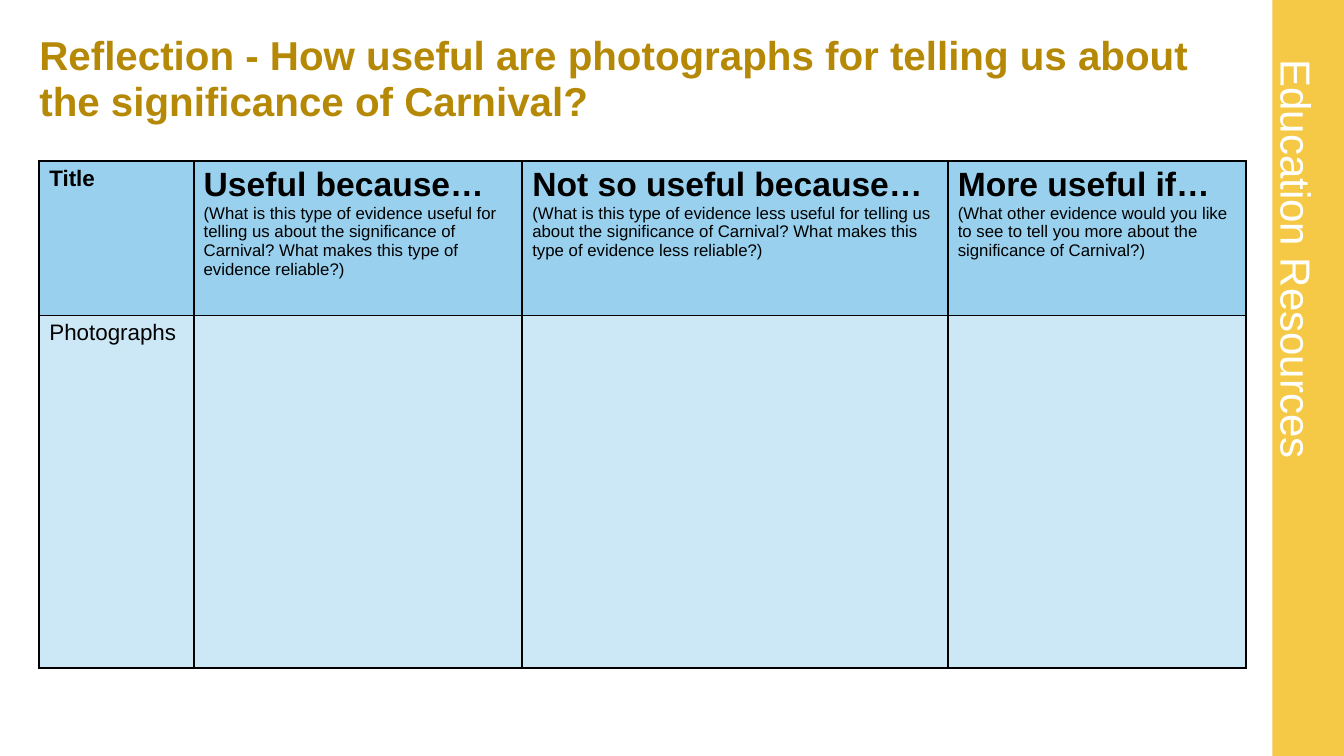
from dataclasses import dataclass

from lxml.etree import SubElement
from pptx import Presentation
from pptx.dml.color import RGBColor
from pptx.enum.shapes import MSO_SHAPE
from pptx.enum.text import MSO_ANCHOR, MSO_AUTO_SIZE, PP_ALIGN
from pptx.oxml.ns import qn
from pptx.util import Inches, Pt


@dataclass(frozen=True)
class Theme:
    font: str = "Arial"
    gold: str = "F5C946"
    title_gold: str = "B58906"
    header_blue: str = "98D0ED"
    body_blue: str = "CCE8F6"
    ink: str = "000000"
    white: str = "FFFFFF"
    title_size: float = 28.8
    banner_size: float = 30
    heading_size: float = 24
    label_size: float = 16
    prompt_size: float = 12
    border_width: float = 1.5


def apply(target, formats):
    for name, value in formats.items():
        setattr(target, name, value)


class SlideBuilder:
    def __init__(self, slide, theme):
        self.slide = slide
        self.theme = theme

    def add_text(self, paragraph, text, size, color, bold=False, **formats):
        run = paragraph.add_run()
        run.text = text
        apply(run.font, {"name": self.theme.font, "size": Pt(size), "bold": bold})
        run.font.color.rgb = RGBColor.from_string(color)
        apply(paragraph, formats)

    def title(self, text, left, top, width, height):
        title = self.slide.shapes.title
        apply(title, {"left": Inches(left), "top": Inches(top),
                      "width": Inches(width), "height": Inches(height)})
        frame = title.text_frame
        apply(frame, {"margin_left": 0, "word_wrap": True,
                      "vertical_anchor": MSO_ANCHOR.MIDDLE,
                      "auto_size": MSO_AUTO_SIZE.NONE})
        self.add_text(frame.paragraphs[0], text, self.theme.title_size,
                      self.theme.title_gold, bold=True,
                      alignment=PP_ALIGN.LEFT, line_spacing=0.95)

    def band(self, left, top, width, height):
        band = self.slide.shapes.add_shape(
            MSO_SHAPE.RECTANGLE, *map(Inches, (left, top, width, height)))
        band.shadow.inherit = False
        band.fill.solid()
        band.fill.fore_color.rgb = RGBColor.from_string(self.theme.gold)
        band.line.fill.background()

    def banner(self, text, left, top, width, height):
        banner = self.slide.shapes.add_textbox(
            *map(Inches, (left, top, width, height)))
        banner.rotation = 90
        frame = banner.text_frame
        apply(frame, {"margin_left": 0, "margin_right": 0, "margin_top": 0,
                      "margin_bottom": 0, "word_wrap": True,
                      "auto_size": MSO_AUTO_SIZE.SHAPE_TO_FIT_TEXT})
        self.add_text(frame.paragraphs[0], text, self.theme.banner_size,
                      self.theme.white, alignment=PP_ALIGN.CENTER,
                      line_spacing=Pt(58.8))

    def cell(self, cell, lines, fill):
        # Borders come before the fill in the cell properties
        properties = cell._tc.get_or_add_tcPr()
        for side in ("a:lnL", "a:lnR", "a:lnT", "a:lnB"):
            border = SubElement(properties, qn(side),
                                w=str(Pt(self.theme.border_width)))
            paint = SubElement(border, qn("a:solidFill"))
            SubElement(paint, qn("a:srgbClr"), val=self.theme.ink)
        cell.fill.solid()
        cell.fill.fore_color.rgb = RGBColor.from_string(fill)
        frame = cell.text_frame
        for index, (text, size, bold) in enumerate(lines):
            paragraph = frame.add_paragraph() if index else frame.paragraphs[0]
            self.add_text(paragraph, text, size, self.theme.ink, bold)

    def table(self, rows, fills, left, top, widths, heights):
        table = self.slide.shapes.add_table(
            len(rows), len(widths), Inches(left), Inches(top),
            Inches(sum(widths)), Inches(sum(heights))).table
        for column, width in zip(table.columns, widths):
            column.width = Inches(width)
        for row, height, contents, fill in zip(table.rows, heights, rows, fills):
            row.height = Inches(height)
            for cell, lines in zip(row.cells, contents):
                self.cell(cell, lines, fill)


def main():
    presentation = Presentation()
    apply(presentation, {"slide_width": Inches(13.33),
                         "slide_height": Inches(7.5)})
    theme = Theme()
    slide = presentation.slides.add_slide(presentation.slide_layouts[5])
    builder = SlideBuilder(slide, theme)

    # Side banner
    builder.band(12.62, 0, 0.71, 7.5)
    builder.banner("Education Resources", 11.07, 2.21, 4.01, 0.72)

    # Title
    builder.title("Reflection - How useful are photographs for telling us "
                  "about the significance of Carnival?", 0.39, 0.4, 12.03, 0.78)

    # Evidence table
    questions = [
        ("Useful because…",
         "(What is this type of evidence useful for telling us about the "
         "significance of Carnival? What makes this type of evidence reliable?)"),
        ("Not so useful because…",
         "(What is this type of evidence less useful for telling us about the "
         "significance of Carnival? What makes this type of evidence less reliable?)"),
        ("More useful if…",
         "(What other evidence would you like to see to tell you more about the "
         "significance of Carnival?)"),
    ]
    header = [[("Title", theme.label_size, True)]] + [
        [(heading, theme.heading_size, True), (prompt, theme.prompt_size, False)]
        for heading, prompt in questions]
    answers = [[("Photographs", theme.label_size, False)]] + [[] for _ in questions]
    builder.table([header, answers], [theme.header_blue, theme.body_blue],
                  0.39, 1.6, [1.53, 3.26, 4.22, 2.96], [1.53, 3.5])

    presentation.save("out.pptx")


if __name__ == "__main__":
    main()
